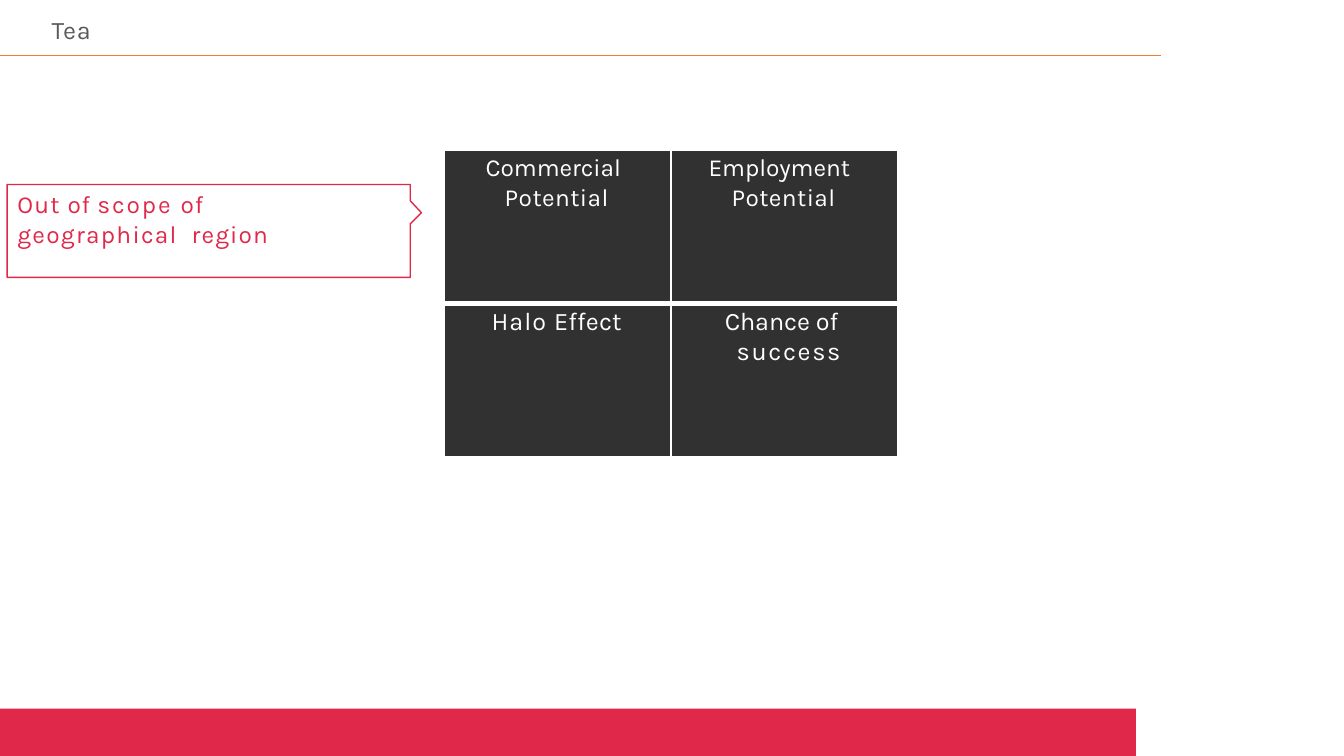
from dataclasses import dataclass

from lxml import etree
from pptx import Presentation
from pptx.dml.color import RGBColor
from pptx.enum.shapes import MSO_CONNECTOR, MSO_SHAPE
from pptx.enum.text import MSO_ANCHOR, MSO_AUTO_SIZE, PP_ALIGN
from pptx.oxml.ns import qn
from pptx.util import Cm, Pt

STRAIGHT = MSO_CONNECTOR.STRAIGHT
RECTANGLE = MSO_SHAPE.RECTANGLE
TOP = MSO_ANCHOR.TOP
LEFT = PP_ALIGN.LEFT
NO_AUTOFIT = MSO_AUTO_SIZE.NONE
TITLE_ONLY = 5


@dataclass(frozen=True)
class Theme:
    """Colours, font and type sizes of the slide."""
    font: str = "Karla"
    red: str = "E0294A"
    orange: str = "ED7D31"
    grey: str = "595959"
    dark: str = "313131"
    white: str = "FFFFFF"
    body: float = 17.5
    large: float = 18
    thin_border: float = 1.5
    thick_border: float = 4.25


THEME = Theme()

CALLOUT_SPANS = [("Out ", 0.8), ("of ", 0.5), ("scope ", 1.4), ("of ", 0.5),
                 ("geographical", 0.9), (" ", 5.5), ("region", 0.8)]

CRITERIA = [
    [dict(lines=[[("Commercial", -0.05)], [("Potential", 0.3)]],
          indent=(1.52, -0.48), size=THEME.body, spacing=1.04, top=0.08),
     dict(lines=[[("Employment", -0.05)], [("Potential", 0.3)]],
          indent=(1.52, -0.58), size=THEME.body, spacing=1.04, top=0.08)],
    [dict(lines=[[("Halo ", 0.7), ("Effect", 0.1)]],
          indent=(1.19, 0), size=THEME.large, spacing=1, top=0.1),
     dict(lines=[[("Chance of", -0.05)], [("success", 1.2)]],
          indent=(1.65, -0.3), size=THEME.large, spacing=1.01, top=0.08)],
]


def apply(target, values):
    """Set each named attribute of the target."""
    for name, value in values.items():
        setattr(target, name, value)


def write(frame, lines, size, color, indent=(0, 0), spacing=1, top=0):
    """Write lines of (text, letter spacing) spans as one paragraph."""
    para = frame.paragraphs[0]
    apply(para, dict(alignment=LEFT, line_spacing=spacing, space_before=Pt(0)))
    properties = para._p.get_or_add_pPr()
    properties.set("marL", str(Cm(indent[0])))
    properties.set("indent", str(Cm(indent[1])))
    for number, line in enumerate(lines):
        if number:
            para.add_line_break()
        for text, tracking in line:
            span = para.add_run()
            span.text = text
            apply(span.font, dict(name=THEME.font, size=Pt(size), bold=False))
            span.font.color.rgb = RGBColor.from_string(color)
            span._r.get_or_add_rPr().set("spc", str(round(tracking * 100)))


def prepare_frame(frame, wrap, top=0):
    """Clear the insets of a text frame and fix its anchor."""
    apply(frame, dict(margin_left=0, margin_right=0, margin_top=Cm(top),
                      margin_bottom=0, word_wrap=wrap, vertical_anchor=TOP,
                      auto_size=NO_AUTOFIT))


def add_header(page, left, top, width, height):
    """Place the title and the rule along the bottom of the box."""
    title = page.shapes.title
    apply(title, dict(left=Cm(left + 1.3), top=Cm(top + 0.3),
                      width=Cm(3), height=Cm(0.84)))
    prepare_frame(title.text_frame, False, 0.06)
    write(title.text_frame, [[("Tea", 0.6)]], THEME.large, THEME.grey)
    rule = page.shapes.add_connector(STRAIGHT, Cm(left), Cm(top + height),
                                     Cm(left + width), Cm(top + height))
    rule.line.color.rgb = RGBColor.from_string(THEME.orange)
    rule.line.width = Pt(0.5)
    etree.SubElement(rule._element.spPr, qn("a:effectLst"))


def add_footer(page, left, top, width, height):
    """Fill the box with the footer band."""
    band = page.shapes.add_shape(RECTANGLE, Cm(left), Cm(top), Cm(width), Cm(height))
    band.shadow.inherit = False
    band.fill.solid()
    band.fill.fore_color.rgb = RGBColor.from_string(THEME.red)
    band.line.fill.background()


def add_callout(page, left, top, width, height):
    """Outline a note whose small pointer reaches the right of the box."""
    body = width - 0.28
    corners = [(body, 0), (body, 0.41), (width, 0.71), (body, 0.99),
               (body, height), (0, height)]
    builder = page.shapes.build_freeform(0, 0)
    builder.add_line_segments([(Cm(x), Cm(y)) for x, y in corners], close=True)
    outline = builder.convert_to_shape(Cm(left), Cm(top))
    outline.shadow.inherit = False
    outline.fill.background()
    outline.line.color.rgb = RGBColor.from_string(THEME.red)
    outline.line.width = Pt(1)
    box = page.shapes.add_textbox(Cm(left + 0.23), Cm(top + 0.08), Cm(8.7), Cm(1.6))
    prepare_frame(box.text_frame, True)
    write(box.text_frame, [CALLOUT_SPANS], THEME.body, THEME.red,
          indent=(0.03, 0), spacing=1.04)


def add_border(cell, side, width):
    """Draw one white side of a table cell."""
    line = etree.SubElement(cell._tc.get_or_add_tcPr(), qn(f"a:ln{side}"), w=str(Pt(width)))
    fill = etree.SubElement(line, qn("a:solidFill"))
    etree.SubElement(fill, qn("a:srgbClr"), val=THEME.white)


def add_criteria(page, left, top, width, height):
    """Fill the box with the two by two table of criteria."""
    table = page.shapes.add_table(len(CRITERIA), len(CRITERIA[0]), Cm(left), Cm(top),
                                  Cm(width), Cm(height)).table
    apply(table, dict(first_row=False, horz_banding=False))
    for row, entries in enumerate(CRITERIA):
        thick_side = "T" if row else "B"
        for column, entry in enumerate(entries):
            cell = table.cell(row, column)
            apply(cell, dict(margin_left=0, margin_right=0, margin_bottom=0,
                             margin_top=Cm(entry["top"]), vertical_anchor=TOP))
            for side in "LRTB":
                thick = side == thick_side
                add_border(cell, side, THEME.thick_border if thick else THEME.thin_border)
            cell.fill.solid()
            cell.fill.fore_color.rgb = RGBColor.from_string(THEME.dark)
            write(cell.text_frame, color=THEME.white, **entry)


def main():
    """Build the slide and save the deck."""
    deck = Presentation()
    apply(deck, dict(slide_width=Cm(33.87), slide_height=Cm(19.05)))
    page = deck.slides.add_slide(deck.slide_layouts[TITLE_ONLY])
    add_footer(page, 0, 17.86, 28.63, 1.19)
    add_header(page, 0, 0, 29.26, 1.4)
    add_criteria(page, 11.2, 3.78, 11.43, 7.74)
    add_callout(page, 0.18, 4.65, 10.44, 2.34)
    deck.save("out.pptx")


if __name__ == "__main__":
    main()
